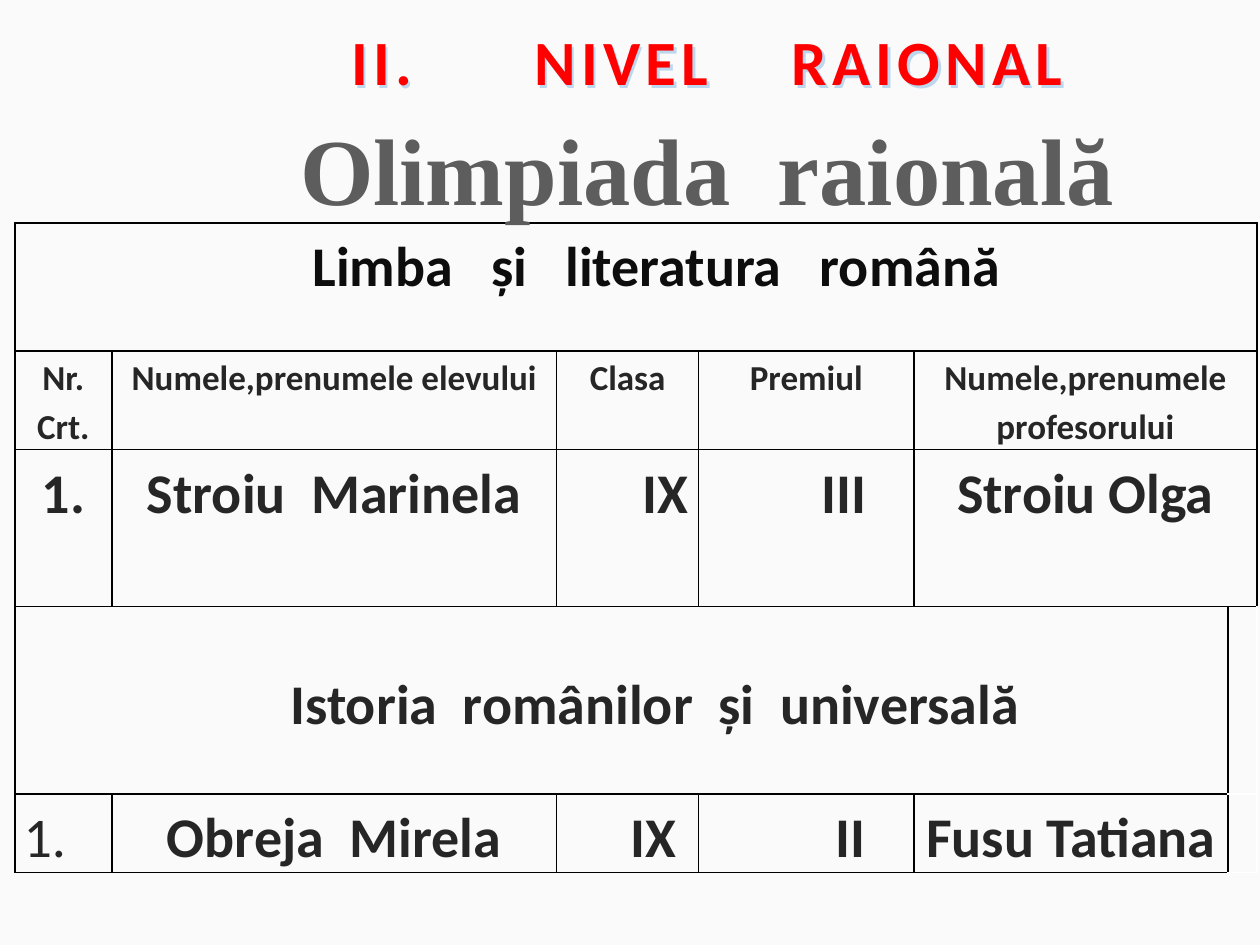
"""Build the slide with the district olympiad results table."""
from itertools import product

from lxml.etree import SubElement
from pptx import Presentation
from pptx.dml.color import RGBColor as Color
from pptx.enum.text import MSO_ANCHOR as Anchor, MSO_AUTO_SIZE as AutoSize, PP_ALIGN as Align
from pptx.oxml import parse_xml
from pptx.oxml.ns import nsdecls, qn
from pptx.util import Pt

THEME = {
    "background": "FAFAFA", "border": "000000", "shadow": "BDD7EE",
    "inset": 5, "edge_inset": 6.85, "line_spacing": 1.15,
    "spaces": {"Calibri": 0.226, "Times New Roman": 0.25},
    "title": {"name": "Calibri", "size": 36, "bold": True, "color": "FF0000"},
    "subtitle": {"name": "Times New Roman", "size": 54, "bold": True, "color": "5D5D5D"},
    "subject": {"name": "Calibri", "size": 32, "bold": True, "color": "0D0D0D"},
    "header": {"name": "Calibri", "size": 20, "bold": True, "color": "262626"},
    "entry": {"name": "Calibri", "size": 32, "bold": True, "color": "262626"},
    "plain": {"name": "Calibri", "size": 32, "bold": False, "color": "262626"},
}

HEADINGS = [
    {"text": "II. NIVEL RAIONAL", "style": "title", "gaps": (6, 4), "indent": 22,
     "tracking": 3, "box": (66, 9.5, 654, 51), "wrap": True},
    {"text": "Olimpiada raională", "style": "subtitle", "gaps": (2,), "indent": 0,
     "tracking": 0, "box": (162, 60, 484, 72.5), "wrap": False},
]

TABLE_ORIGIN = (8.5, 127.5)
COLUMN_WIDTHS = (55.4, 254.2, 81.2, 123, 179.5, 7.2)
ROW_HEIGHTS = (73, 56.5, 89.7, 107, 44.8)
ROWS = [
    [{"text": "Limba și literatura română", "span": 6, "style": "subject",
      "align": Align.LEFT, "indent": 165, "gaps": (3, 3, 3)}],
    [{"text": "Nr.\nCrt.", "style": "header"},
     {"text": "Numele,prenumele elevului", "style": "header"},
     {"text": "Clasa", "style": "header"},
     {"text": "Premiul", "style": "header"},
     {"text": "Numele,prenumele profesorului", "style": "header", "span": 2}],
    [{"text": "1."}, {"text": "Stroiu Marinela", "gaps": (2,)},
     {"text": "IX", "indent": 43}, {"text": "III", "indent": 43},
     {"text": "Stroiu Olga", "span": 2}],
    [{"text": "Istoria românilor și universală", "span": 5, "align": Align.LEFT,
      "indent": 152.5, "gaps": (2, 2, 2), "anchor": Anchor.MIDDLE}],
    [{"text": "1.", "style": "plain", "align": Align.LEFT},
     {"text": "Obreja Mirela", "gaps": (2,)},
     {"text": "IX", "indent": 29}, {"text": "II", "indent": 50.5},
     {"text": "Fusu Tatiana"}],
]
ALL_SIDES = ("L", "R", "T", "B")
OPEN_CELLS = {(3, 5): ("L", "T"), (4, 5): ("L",)}


def set_values(target, **values):
    for name, value in values.items():
        setattr(target, name, value)


def add_run(paragraph, text, style, spacing):
    run = paragraph.add_run()
    run.text = text
    set_values(run.font, name=style["name"], size=Pt(style["size"]), bold=style["bold"])
    run.font.color.rgb = Color.from_string(style["color"])
    if spacing:
        run._r.get_or_add_rPr().set("spc", str(round(spacing * 100)))


def write_line(paragraph, text, style, align=Align.CENTER, indent=0, gaps=(), tracking=0):
    """Write words whose gaps are single spaces widened by character spacing."""
    if indent:
        properties = paragraph._p.get_or_add_pPr()
        properties.set("marL", str(Pt(indent)))
        properties.set("indent", "0")
    set_values(paragraph, alignment=align, space_before=Pt(0))
    if not gaps:
        add_run(paragraph, text, style, tracking)
        return
    space = THEME["spaces"][style["name"]] * style["size"] + tracking
    words = text.split(" ")
    add_run(paragraph, words[0], style, tracking)
    for gap, word in zip(gaps, words[1:]):
        add_run(paragraph, " ", style, tracking + (gap - 1) * space)
        add_run(paragraph, word, style, tracking)


def add_heading(shape, heading):
    left, top, width, height = map(Pt, heading["box"])
    set_values(shape, left=left, top=top, width=width, height=height)
    frame = shape.text_frame
    set_values(frame, word_wrap=heading["wrap"], auto_size=AutoSize.NONE,
               vertical_anchor=Anchor.TOP)
    write_line(frame.paragraphs[0], heading["text"], THEME[heading["style"]],
               indent=heading["indent"], gaps=heading["gaps"], tracking=heading["tracking"])


def add_text_shadow(shape):
    shape._element.spPr.append(parse_xml(
        f'<a:effectLst {nsdecls("a")}><a:outerShdw dist="{Pt(2)}" dir="2700000">'
        f'<a:srgbClr val="{THEME["shadow"]}"/></a:outerShdw></a:effectLst>'))


def format_cell(cell, sides, inset):
    set_values(cell, margin_left=Pt(inset), margin_right=Pt(inset),
               margin_top=0, margin_bottom=0)
    properties = cell._tc.get_or_add_tcPr()
    for side in sides:
        line = SubElement(properties, qn(f"a:ln{side}"), w=str(Pt(1)))
        fill = SubElement(line, qn("a:solidFill"))
        SubElement(fill, qn("a:srgbClr"), val=THEME["border"])
    cell.fill.background()


def fill_cell(cell, text, style="entry", anchor=Anchor.TOP, **line_format):
    cell.vertical_anchor = anchor
    for index, line in enumerate(text.split("\n")):
        frame = cell.text_frame
        paragraph = frame.add_paragraph() if index else frame.paragraphs[0]
        paragraph.line_spacing = THEME["line_spacing"]
        write_line(paragraph, line, THEME[style], **line_format)


def add_results(slide):
    row_count, column_count = len(ROW_HEIGHTS), len(COLUMN_WIDTHS)
    left, top = map(Pt, TABLE_ORIGIN)
    frame = slide.shapes.add_table(row_count, column_count, left, top,
                                   Pt(sum(COLUMN_WIDTHS)), Pt(sum(ROW_HEIGHTS)))
    slide.shapes._spTree.insert(2, frame._element)
    table = frame.table
    set_values(table, first_row=False, horz_banding=False)
    for column, width in zip(table.columns, COLUMN_WIDTHS):
        column.width = Pt(width)
    for row, height in zip(table.rows, ROW_HEIGHTS):
        row.height = Pt(height)
    for position in product(range(row_count), range(column_count)):
        inset = THEME["edge_inset"] if position in OPEN_CELLS else THEME["inset"]
        format_cell(table.cell(*position), OPEN_CELLS.get(position, ALL_SIDES), inset)
    for row_index, entries in enumerate(ROWS):
        column_index = 0
        for entry in entries:
            content = dict(entry)
            span = content.pop("span", 1)
            cell = table.cell(row_index, column_index)
            if span > 1:
                cell.merge(table.cell(row_index, column_index + span - 1))
            fill_cell(cell, **content)
            column_index += span


def main():
    presentation = Presentation()
    set_values(presentation, slide_width=Pt(720), slide_height=Pt(540))
    slide = presentation.slides.add_slide(presentation.slide_layouts[0])
    background = slide.background.fill
    background.solid()
    background.fore_color.rgb = Color.from_string(THEME["background"])
    for shape, heading in zip(slide.placeholders, HEADINGS):
        add_heading(shape, heading)
    add_text_shadow(slide.shapes.title)
    add_results(slide)
    presentation.save("out.pptx")


if __name__ == "__main__":
    main()
